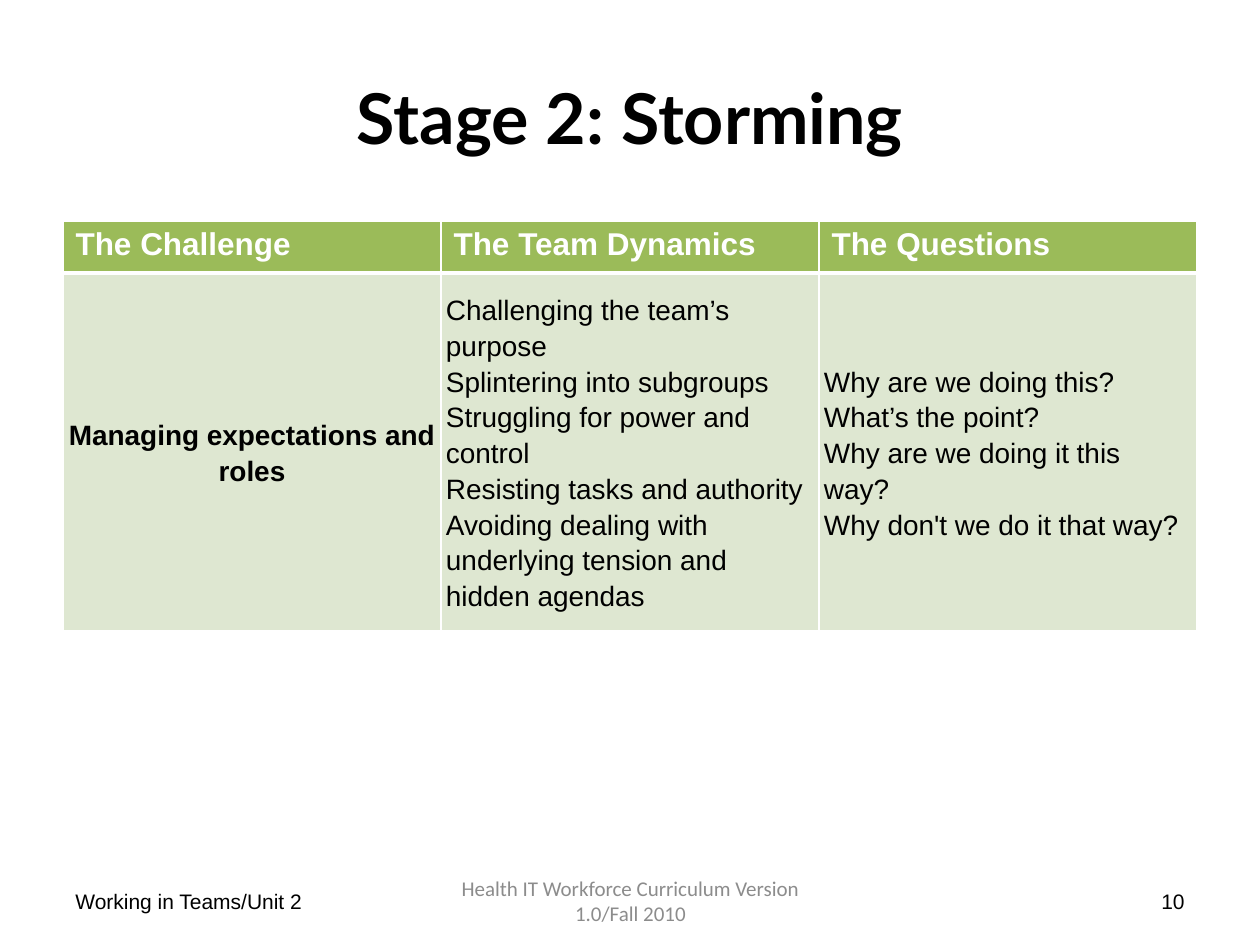
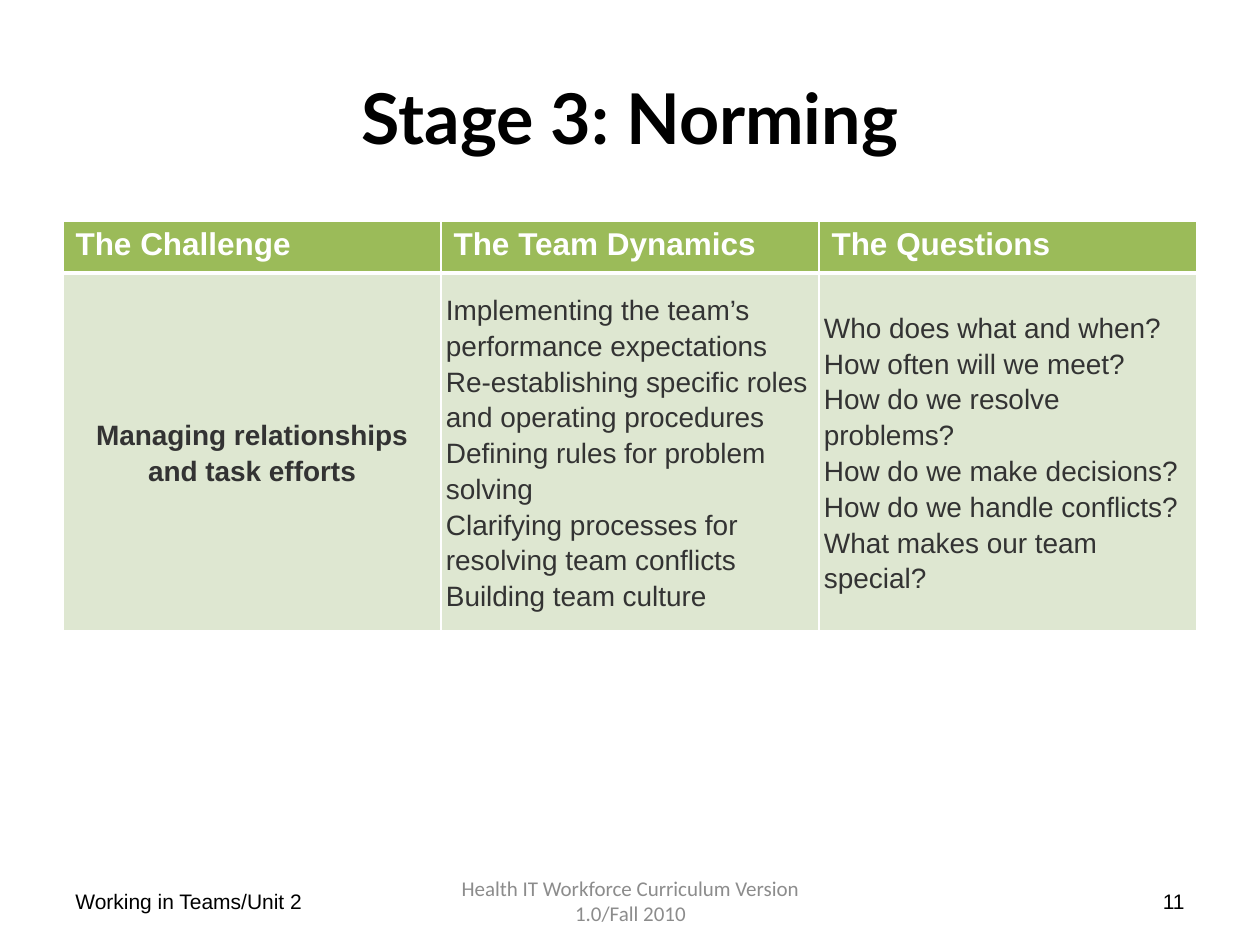
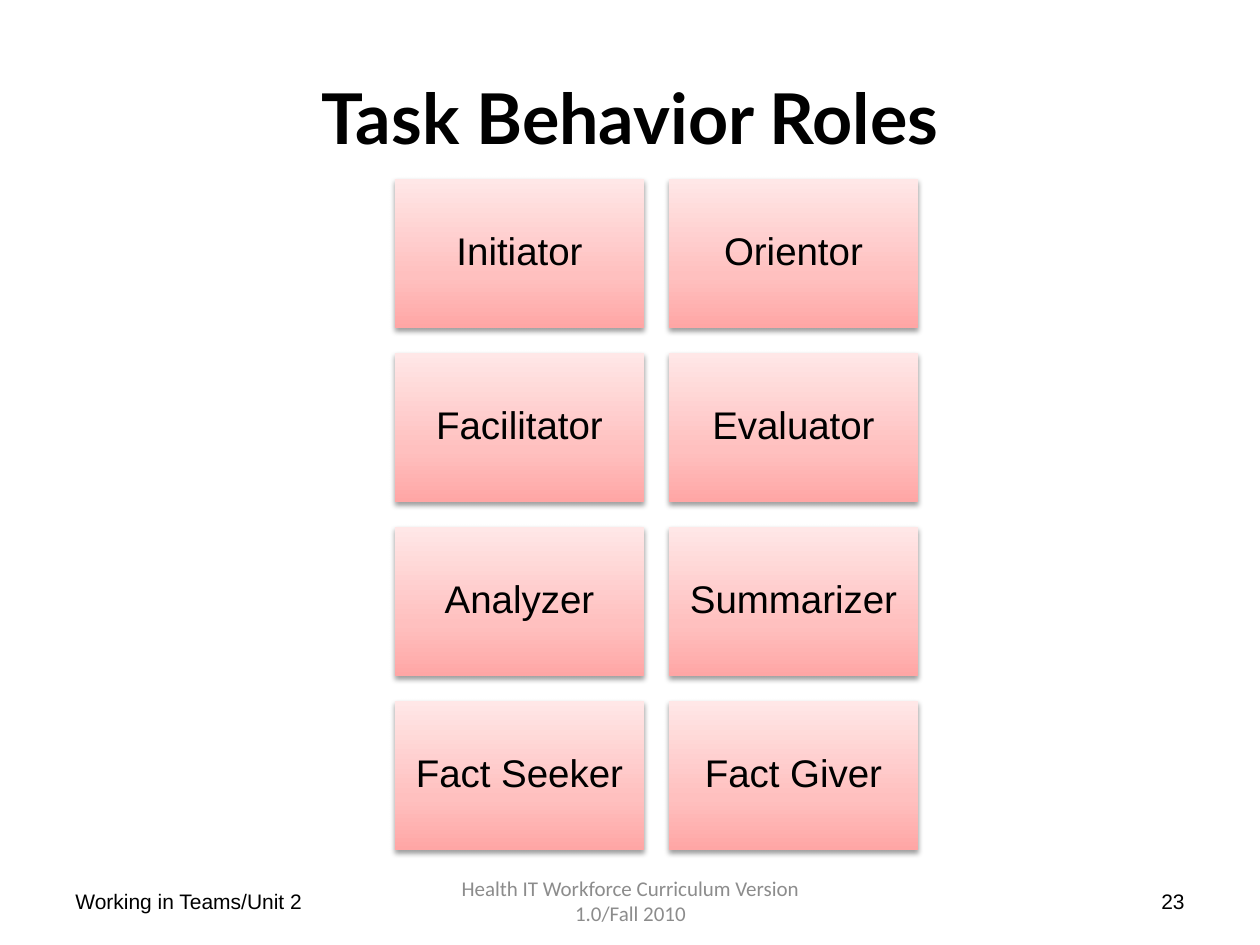
from dataclasses import dataclass

from lxml.etree import SubElement as Sub, fromstring
from pptx import Presentation
from pptx.dml.color import RGBColor as RGB
from pptx.enum.shapes import MSO_SHAPE as SHAPE
from pptx.enum.text import MSO_ANCHOR as ANCHOR, PP_ALIGN as ALIGN
from pptx.oxml.ns import nsdecls, qn
from pptx.util import Emu, Pt

# Colours
BLACK = RGB(0x00, 0x00, 0x00)
WHITE = RGB(0xFF, 0xFF, 0xFF)
DARK = RGB(0x33, 0x33, 0x33)
GREY = RGB(0x8C, 0x8C, 0x8C)
GREEN = RGB(0x9B, 0xBB, 0x59)
PALE = RGB(0xDE, 0xE7, 0xD1)
ROSE = RGB(0xFF, 0xA6, 0xA5)
PINK = RGB(0xFF, 0xC0, 0xBF)
BLUSH = RGB(0xFF, 0xE7, 0xE7)

# Lengths in px, 126 to the inch
WIDE, HIGH = 1260, 945
EDGE = 63


def px(n: int) -> Emu:
    return Emu(round(n * 914400 / 126))


@dataclass(frozen=True)
class Box:
    left: int
    top: int
    width: int
    height: int

    def emu(self) -> list[Emu]:
        return [px(n) for n in (self.left, self.top, self.width, self.height)]


@dataclass(frozen=True)
class Style:
    font: str
    size: int
    color: RGB
    bold: bool = False
    align: ALIGN = ALIGN.LEFT
    space: float = 1.0


@dataclass(frozen=True)
class Stage:
    title: str
    page: int
    color: RGB
    task: str
    moves: tuple[str, ...]
    asks: tuple[str, ...]


# Shared styles and places
TITLE = Style("Lato", 40, BLACK, True, ALIGN.CENTER)
UNIT = Style("Arial", 12, BLACK)
PAGE = Style("Arial", 12, BLACK, align=ALIGN.RIGHT)
NOTE = Style("Calibri", 12, GREY, align=ALIGN.CENTER)
HEAD = Style("Arial", 18, WHITE, True)
ROLE = Style("Arial", 22, BLACK, align=ALIGN.CENTER, space=0.9)

TITLE_BOX = Box(EDGE, 38, 1134, 157)
UNIT_BOX = Box(EDGE, 876, 294, 50)
PAGE_BOX = Box(903, 876, 294, 50)
NOTE_BOX = Box(431, 876, 399, 50)
GRID_BOX = Box(EDGE, 221, 1134, 382)
HEAD_ROW = 52
CELL_PAD = 5

# Role cards
CARD = Box(395, 179, 249, 149)
GAP = 25
CARD_PAD = 11

# Content
HEADS = ("The Challenge", "The Team Dynamics", "The Questions")
STAGES = (
    Stage(
        "Stage 2: Storming", 10, BLACK,
        "Managing expectations and roles",
        ("Challenging the team’s purpose",
         "Splintering into subgroups",
         "Struggling for power and control",
         "Resisting tasks and authority",
         "Avoiding dealing with underlying tension and hidden agendas"),
        ("Why are we doing this?",
         "What’s the point?",
         "Why are we doing it this way?",
         "Why don't we do it that way?"),
    ),
    Stage(
        "Stage 3: Norming", 11, DARK,
        "Managing relationships and task efforts",
        ("Implementing the team’s performance expectations",
         "Re-establishing specific roles and operating procedures",
         "Defining rules for problem solving",
         "Clarifying processes for resolving team conflicts",
         "Building team culture"),
        ("Who does what and when?",
         "How often will we meet?",
         "How do we resolve problems?",
         "How do we make decisions?",
         "How do we handle conflicts?",
         "What makes our team special?"),
    ),
)
ROLES = (
    ("Initiator", "Orientor"),
    ("Facilitator", "Evaluator"),
    ("Analyzer", "Summarizer"),
    ("Fact Seeker", "Fact Giver"),
)


def write(frame, text: str, style: Style) -> None:
    """Fill a text frame with one paragraph in the given style."""
    frame.word_wrap = True
    para = frame.paragraphs[0]
    para.text = text
    para.alignment = style.align
    para.line_spacing = style.space
    for run in para.runs:
        font = run.font
        font.name, font.size, font.bold = style.font, Pt(style.size), style.bold
        font.color.rgb = style.color
    # Line breaks take the size of the text around them
    for brk in para._p.iter(qn("a:br")):
        Sub(brk, qn("a:rPr"), sz=str(style.size * 100))


def label(slide, box: Box, text: str, style: Style) -> None:
    frame = slide.shapes.add_textbox(*box.emu()).text_frame
    frame.vertical_anchor = ANCHOR.MIDDLE
    write(frame, text, style)


def start(deck, title: str, page: int):
    """Add a blank slide with its title and footers."""
    slide = deck.slides.add_slide(deck.slide_layouts[6])
    label(slide, TITLE_BOX, title, TITLE)
    label(slide, UNIT_BOX, "Working in Teams/Unit 2", UNIT)
    label(slide, PAGE_BOX, str(page), PAGE)
    label(slide, NOTE_BOX,
          "Health IT Workforce Curriculum Version 1.0/Fall 2010", NOTE)
    return slide


def border(cell, top: int, base: int) -> None:
    """Draw white cell edges, widths in points."""
    props = cell._tc.get_or_add_tcPr()
    for side, width in (("L", 1), ("R", 1), ("T", top), ("B", base)):
        line = Sub(props, qn(f"a:ln{side}"), w=str(Pt(width)))
        Sub(Sub(line, qn("a:solidFill")), qn("a:srgbClr"), val=str(WHITE))


def paint(cell, color: RGB) -> None:
    cell.fill.solid()
    cell.fill.fore_color.rgb = color


def grid(slide, stage: Stage) -> None:
    """Add the table of challenge, dynamics and questions."""
    table = slide.shapes.add_table(2, len(HEADS), *GRID_BOX.emu()).table
    table.first_row = table.horz_banding = False
    table.rows[0].height = px(HEAD_ROW)
    table.rows[1].height = px(GRID_BOX.height - HEAD_ROW)

    body = (stage.task, "\v".join(stage.moves), "\v".join(stage.asks))
    for col, (head, text) in enumerate(zip(HEADS, body)):
        cell = table.cell(0, col)
        border(cell, 1, 3)
        paint(cell, GREEN)
        write(cell.text_frame, head, HEAD)

        cell = table.cell(1, col)
        border(cell, 3, 1)
        paint(cell, PALE)
        cell.vertical_anchor = ANCHOR.MIDDLE
        cell.margin_left = cell.margin_right = px(CELL_PAD)
        cell.margin_top = cell.margin_bottom = px(CELL_PAD)
        first = col == 0
        align = ALIGN.CENTER if first else ALIGN.LEFT
        write(cell.text_frame, text,
              Style("Arial", 16, stage.color, first, align, 1.15))


def shade(shape) -> None:
    """Give a shape the rising pink blend and a soft drop shadow."""
    stops = "".join(
        f'<a:gs pos="{pos}000"><a:srgbClr val="{color}"/></a:gs>'
        for pos, color in ((0, ROSE), (35, PINK), (100, BLUSH)))
    blend = fromstring(
        f'<a:gradFill {nsdecls("a")} rotWithShape="1"><a:gsLst>{stops}</a:gsLst>'
        '<a:lin ang="16200000" scaled="0"/></a:gradFill>')
    props = shape._element.spPr
    props.find(qn("a:prstGeom")).addnext(blend)
    shape.line.fill.background()

    shape.shadow.inherit = False
    drop = Sub(props.find(qn("a:effectLst")), qn("a:outerShdw"), blurRad="40000",
               dist="20000", dir="5400000", rotWithShape="0")
    tint = Sub(drop, qn("a:srgbClr"), val=str(BLACK))
    Sub(tint, qn("a:alpha"), val="38000")


def card(slide, box: Box, text: str) -> None:
    shape = slide.shapes.add_shape(SHAPE.RECTANGLE, *box.emu())
    shade(shape)
    frame = shape.text_frame
    frame.vertical_anchor = ANCHOR.MIDDLE
    frame.margin_left = frame.margin_right = px(CARD_PAD)
    frame.margin_top = frame.margin_bottom = px(CARD_PAD)
    write(frame, text, ROLE)


def main() -> None:
    deck = Presentation()
    deck.slide_width, deck.slide_height = px(WIDE), px(HIGH)

    # Team stages
    for stage in STAGES:
        grid(start(deck, stage.title, stage.page), stage)

    # Task roles
    slide = start(deck, "Task Behavior Roles", 23)
    for row, pair in enumerate(ROLES):
        for col, role in enumerate(pair):
            box = Box(CARD.left + col * (CARD.width + GAP),
                      CARD.top + row * (CARD.height + GAP),
                      CARD.width, CARD.height)
            card(slide, box, role)

    deck.save("out.pptx")


if __name__ == "__main__":
    main()
